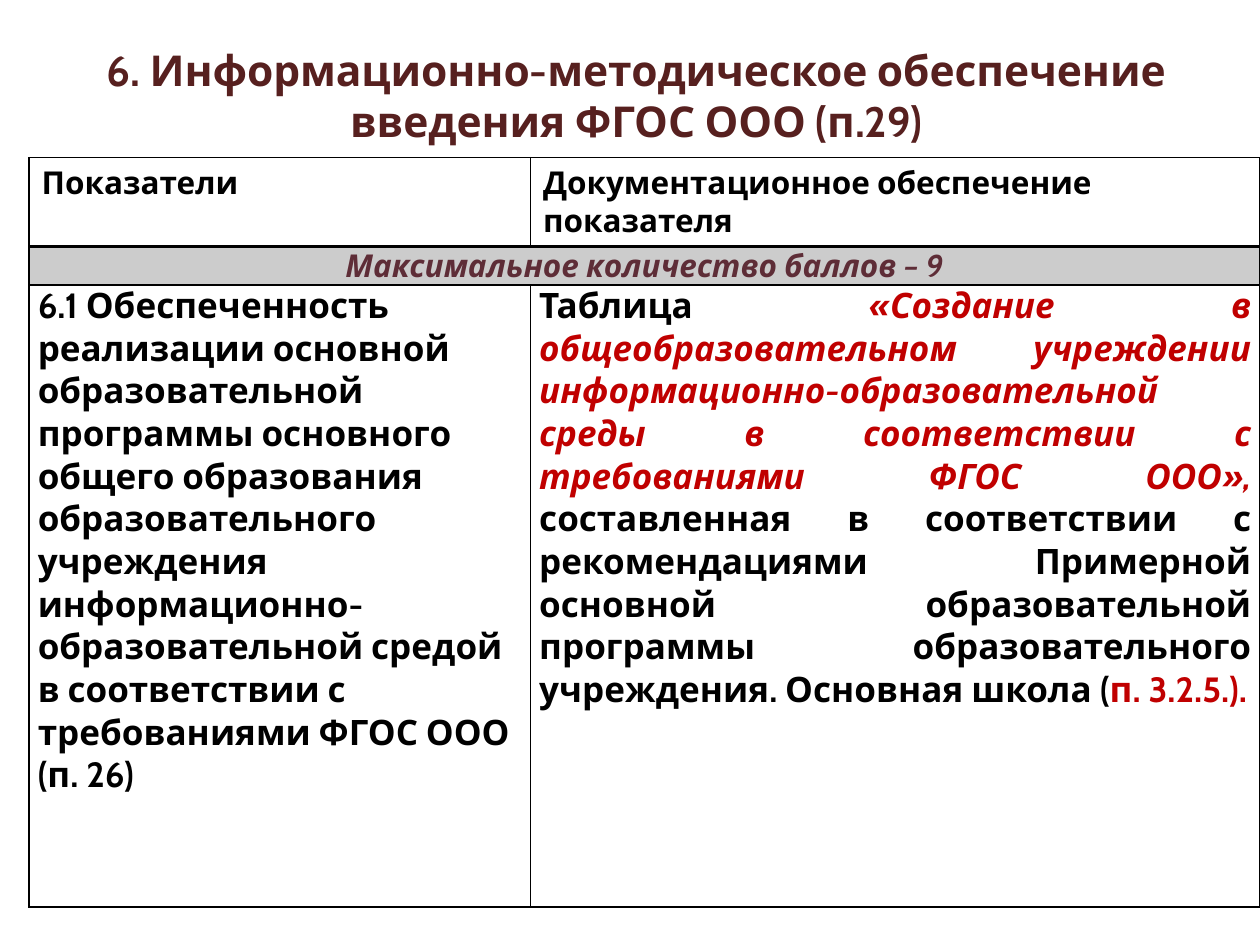
from dataclasses import dataclass

from lxml import etree
from pptx import Presentation
from pptx.dml.color import RGBColor
from pptx.enum.text import MSO_ANCHOR, PP_ALIGN
from pptx.oxml.ns import qn
from pptx.util import Inches, Pt

LEFT, CENTER, JUSTIFY = PP_ALIGN.LEFT, PP_ALIGN.CENTER, PP_ALIGN.JUSTIFY
MIDDLE = MSO_ANCHOR.MIDDLE


@dataclass(frozen=True)
class Theme:
    font: str = "Cabin"
    black: str = "000000"
    title: str = "57201F"
    score: str = "5E2D37"
    accent: str = "C00000"
    band: str = "CCCCCC"
    title_size: float = 24.3
    head_size: float = 18
    body_size: float = 20
    thin: float = 1
    thick: float = 2


theme = Theme()


def write(frame, text, size=theme.body_size, color=theme.black, italic=False, align=LEFT):
    paragraph = frame.paragraphs[0]
    paragraph.alignment = align
    run = paragraph.add_run()
    run.text = text
    run.font.name = theme.font
    run.font.size = Pt(size)
    run.font.bold = True
    run.font.italic = italic
    run.font.color.rgb = RGBColor.from_string(color)


def draw_border(cell, side, width):
    line = etree.SubElement(cell._tc.get_or_add_tcPr(), qn(f"a:ln{side}"), w=str(Pt(width)))
    fill = etree.SubElement(line, qn("a:solidFill"))
    etree.SubElement(fill, qn("a:srgbClr"), val=theme.black)


deck = Presentation()
deck.slide_width, deck.slide_height = Inches(10), Inches(7.5)
width, height = deck.slide_width, deck.slide_height
slide = deck.slides.add_slide(deck.slide_layouts[6])

heading = slide.shapes.add_textbox(
    int(width * 0.05), int(height * 0.05), int(width * 0.91), int(height * 0.1)
).text_frame
heading.word_wrap = True
heading.vertical_anchor = MIDDLE
write(heading, "6. Информационно-методическое обеспечение введения ФГОС ООО (п.29)",
      size=theme.title_size, color=theme.title, align=CENTER)

column_widths = [Inches(3.98), Inches(5.79)]
row_heights = [Inches(0.71), Inches(0.3), Inches(4.94)]
indicators = slide.shapes.add_table(
    3, 2, width - sum(column_widths), int(height / 6), sum(column_widths), sum(row_heights)
).table
indicators.first_row = False
indicators.horz_banding = False
for column, size in zip(indicators.columns, column_widths):
    column.width = size
for row, size in zip(indicators.rows, row_heights):
    row.height = size

for row_index, row in enumerate(indicators.rows):
    for cell in row.cells:
        for side in "LRTB":
            under_head = (row_index, side) in [(0, "B"), (1, "T")]
            draw_border(cell, side, theme.thick if under_head else theme.thin)
        if row_index == 1:
            cell.fill.solid()
            cell.fill.fore_color.rgb = RGBColor.from_string(theme.band)
        else:
            cell.fill.background()
        if row_index > 0:
            cell.margin_left = cell.margin_right = Inches(0.07)
            cell.margin_top = cell.margin_bottom = 0

for column, label in enumerate(["Показатели", "Документационное обеспечение показателя"]):
    write(indicators.cell(0, column).text_frame, label, size=theme.head_size)

score = indicators.cell(1, 0)
score.merge(indicators.cell(1, 1))
write(score.text_frame, "Максимальное количество баллов – 9",
      size=theme.head_size, color=theme.score, italic=True, align=CENTER)

write(indicators.cell(2, 0).text_frame,
      "6.1 Обеспеченность реализации основной образовательной программы "
      "основного общего образования образовательного учреждения "
      "информационно-образовательной средой в соответствии с требованиями "
      "ФГОС ООО (п. 26)")

evidence = [
    ("Таблица ", theme.black, False),
    ("«Создание в общеобразовательном учреждении информационно-образовательной "
     "среды в соответствии с требованиями ФГОС ООО»,", theme.accent, True),
    (" составленная в соответствии с рекомендациями Примерной основной "
     "образовательной программы образовательного учреждения. Основная школа (",
     theme.black, False),
    ("п. 3.2.5.).", theme.accent, False),
]
for text, color, italic in evidence:
    write(indicators.cell(2, 1).text_frame, text, color=color, italic=italic, align=JUSTIFY)

deck.save("out.pptx")
